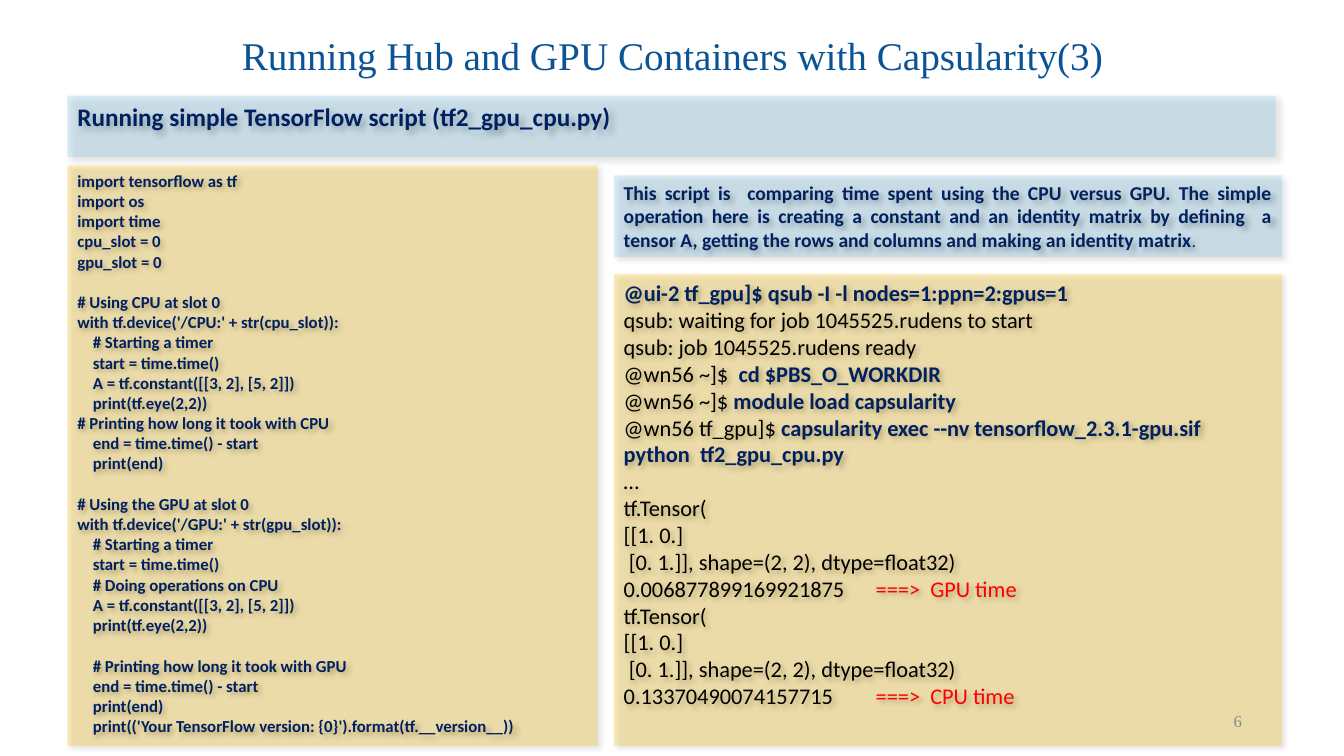
"""Build a slide on timing a TensorFlow script on CPU and GPU in containers."""
from dataclasses import dataclass
from typing import Optional

from lxml.etree import SubElement
from pptx import Presentation
from pptx.dml.color import RGBColor
from pptx.enum.shapes import MSO_SHAPE
from pptx.enum.text import MSO_ANCHOR, MSO_AUTO_SIZE, PP_ALIGN
from pptx.oxml.ns import qn
from pptx.util import Cm, Pt

NAVY = RGBColor(0x00, 0x20, 0x60)
BLACK = RGBColor(0x00, 0x00, 0x00)
RED = RGBColor(0xFF, 0x00, 0x00)
TITLE_BLUE = RGBColor(0x0B, 0x53, 0x94)
PAGE_GRAY = RGBColor(0x8C, 0x8C, 0x8C)
PALE_BLUE = RGBColor(0x77, 0xC2, 0xE8)
AMBER = RGBColor(0xFF, 0xC0, 0x00)

SANS, SERIF = "Calibri", "Times New Roman"
CODE_INDENT = "    "
FRAME_FORMAT = {"word_wrap": True, "auto_size": MSO_AUTO_SIZE.NONE,
                "margin_left": Cm(0.25), "margin_right": Cm(0.25),
                "margin_top": Cm(0.13), "margin_bottom": Cm(0.13)}


@dataclass
class Span:
    text: str
    size: float
    color: RGBColor = NAVY
    bold: bool = True
    face: str = SANS


@dataclass
class Line:
    spans: list[Span]
    align: PP_ALIGN = PP_ALIGN.LEFT
    before: float = 0
    indent: float = 0
    tab: Optional[float] = None
    spacing: float = 1.0


@dataclass
class Panel:
    left: float
    top: float
    width: float
    height: float
    fill: RGBColor
    lines: list[Line]


SCRIPT = """import tensorflow as tf
import os
import time
cpu_slot = 0
gpu_slot = 0

# Using CPU at slot 0
with tf.device('/CPU:' + str(cpu_slot)):
    # Starting a timer
    start = time.time()
    A = tf.constant([[3, 2], [5, 2]])
    print(tf.eye(2,2))
# Printing how long it took with CPU
    end = time.time() - start
    print(end)

# Using the GPU at slot 0
with tf.device('/GPU:' + str(gpu_slot)):
    # Starting a timer
    start = time.time()
    # Doing operations on CPU
    A = tf.constant([[3, 2], [5, 2]])
    print(tf.eye(2,2))

    # Printing how long it took with GPU
    end = time.time() - start
    print(end)
    print(('Your TensorFlow version: {0}').format(tf.__version__))"""


def script_lines(source: str) -> list[Line]:
    """Turn code into lines, with gaps and indents as paragraph formats."""
    return [Line([Span(row.strip(), 12)],
                 before=14.6 if block and not position else 0,
                 indent=0.39 if row.startswith(CODE_INDENT) else 0)
            for block, rows in enumerate(source.split("\n\n"))
            for position, row in enumerate(rows.split("\n"))]


def command(prompt: str, entry: str) -> Line:
    """Return a shell prompt followed by the typed command."""
    return Line([Span(prompt, 16, BLACK, False), Span(entry, 16)])


def output(text: str) -> Line:
    """Return one line of program output."""
    return Line([Span(text, 16, BLACK, False)])


def timing(seconds: str, device: str, tab: float) -> list[Line]:
    """Return the printed matrix and the time marked with its device."""
    return [output("tf.Tensor("), output("[[1. 0.]"),
            output(" [0. 1.]], shape=(2, 2), dtype=float32)"),
            Line([Span(f"{seconds}\t", 16, BLACK, False),
                  Span(f"===>  {device} time", 16, RED, False)], tab=tab)]


HEADING = Panel(1.7, 2.41, 30.45, 1.55, PALE_BLUE, [
    Line([Span("Running simple TensorFlow script (tf2_gpu_cpu.py)", 18)])])
CODE = Panel(1.7, 4.17, 13.36, 14.63, AMBER, script_lines(SCRIPT))
EXPLANATION = Panel(15.47, 4.42, 16.84, 2.06, PALE_BLUE, [
    Line([Span("This script is  comparing time spent using the CPU versus GPU. "
               "The simple operation here is creating a constant and an identity "
               "matrix by defining  a tensor A, getting the rows and columns and "
               "making an identity matrix", 14),
          Span(".", 12, bold=False)], PP_ALIGN.JUSTIFY)])
SESSION = Panel(15.47, 6.91, 16.84, 11.89, AMBER, [
    Line([Span("@ui-2 tf_gpu]$ qsub -I -l nodes=1:ppn=2:gpus=1", 16)]),
    output("qsub: waiting for job 1045525.rudens to start"),
    output("qsub: job 1045525.rudens ready"),
    command("@wn56 ~]$  ", "cd $PBS_O_WORKDIR"),
    command("@wn56 ~]$ ", "module load capsularity"),
    command("@wn56 tf_gpu]$ ",
            "capsularity exec --nv tensorflow_2.3.1-gpu.sif python  tf2_gpu_cpu.py"),
    output("…"),
    *timing("0.006877899169921875", "GPU", 7.86),
    *timing("0.13370490074157715", "CPU", 8.08)])


def place(shape, left: float, top: float, width: float, height: float) -> None:
    """Move and size a shape, in centimetres."""
    box = {"left": left, "top": top, "width": width, "height": height}
    for name, length in box.items():
        setattr(shape, name, Cm(length))


def write(shape, lines: list[Line], anchor: MSO_ANCHOR = MSO_ANCHOR.TOP) -> None:
    """Fill a shape's text frame with formatted lines."""
    frame = shape.text_frame
    for name, value in {**FRAME_FORMAT, "vertical_anchor": anchor}.items():
        setattr(frame, name, value)
    for number, line in enumerate(lines):
        paragraph = frame.add_paragraph() if number else frame.paragraphs[0]
        layout = {"alignment": line.align, "line_spacing": line.spacing,
                  "space_before": Pt(line.before), "space_after": Pt(0)}
        for name, value in layout.items():
            setattr(paragraph, name, value)
        properties = paragraph._p.get_or_add_pPr()
        properties.set("marL", str(Cm(line.indent)))
        properties.set("indent", "0")
        SubElement(properties, qn("a:buNone"))
        if line.tab is not None:
            tabs = SubElement(properties, qn("a:tabLst"))
            SubElement(tabs, qn("a:tab"), pos=str(Cm(line.tab)), algn="l")
        for span in line.spans:
            run = paragraph.add_run()
            run.text = span.text
            style = {"size": Pt(span.size), "bold": span.bold, "name": span.face}
            for name, value in style.items():
                setattr(run.font, name, value)
            run.font.color.rgb = span.color


def draw_panel(shape, panel: Panel) -> None:
    """Give a shape the translucent fill, shadow and text of a panel."""
    place(shape, panel.left, panel.top, panel.width, panel.height)
    shape.fill.solid()
    shape.fill.fore_color.rgb = panel.fill
    shape.line.fill.background()
    shape.shadow.inherit = False
    properties = shape._element.spPr
    tint = properties.find(qn("a:solidFill")).find(qn("a:srgbClr"))
    SubElement(tint, qn("a:alpha"), val="26000")
    shadow = SubElement(properties.find(qn("a:effectLst")), qn("a:outerShdw"),
                        blurRad=str(Pt(4)), dist=str(Pt(3)), dir="2700000",
                        algn="tl", rotWithShape="0")
    shade = SubElement(shadow, qn("a:srgbClr"), val=str(BLACK))
    SubElement(shade, qn("a:alpha"), val="40000")
    write(shape, panel.lines)


def main() -> None:
    """Create the presentation and save it."""
    deck = Presentation()
    deck.slide_width, deck.slide_height = Cm(33.87), Cm(19.05)
    slide = deck.slides.add_slide(deck.slide_layouts[1])
    title, heading = slide.placeholders
    place(title, 2.34, 0.56, 29.21, 1.8)
    write(title, [Line([Span("Running Hub and GPU Containers with Capsularity(3)",
                             28, TITLE_BLUE, False, SERIF)],
                       PP_ALIGN.CENTER, spacing=0.9)], MSO_ANCHOR.MIDDLE)
    draw_panel(heading, HEADING)
    for panel in (CODE, EXPLANATION, SESSION):
        draw_panel(slide.shapes.add_shape(MSO_SHAPE.RECTANGLE, 0, 0, 0, 0), panel)
    page_number = slide.shapes.add_textbox(Cm(23.93), Cm(17.65), Cm(7.62), Cm(1.02))
    write(page_number, [Line([Span("6", 12, PAGE_GRAY, False, SERIF)],
                             PP_ALIGN.RIGHT)], MSO_ANCHOR.MIDDLE)
    deck.save("out.pptx")


if __name__ == "__main__":
    main()
